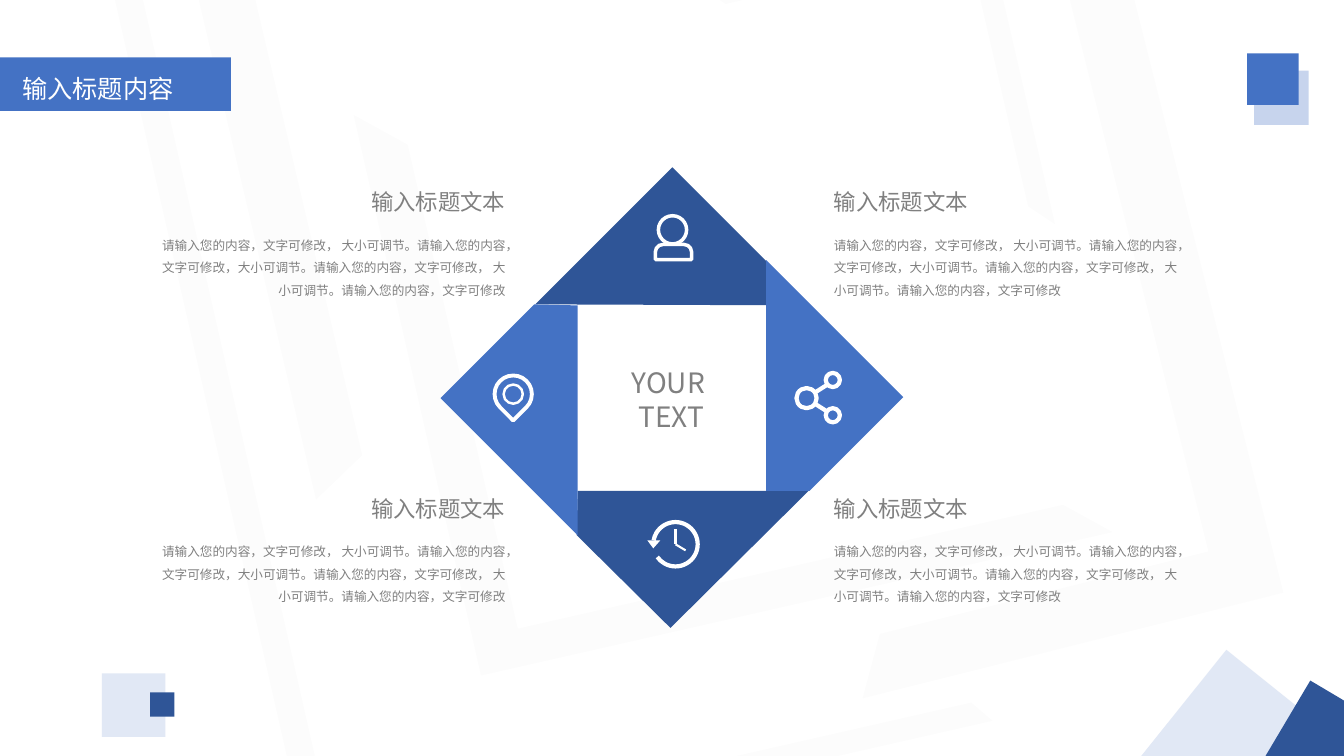
"""Build a slide with a four-part diamond, four text blocks and a centre label."""
from lxml import etree
from pptx import Presentation
from pptx.dml.color import RGBColor
from pptx.enum.shapes import MSO_CONNECTOR, MSO_SHAPE
from pptx.enum.text import MSO_ANCHOR, MSO_AUTO_SIZE, PP_ALIGN
from pptx.oxml.ns import qn
from pptx.util import Inches, Pt

RECT, OVAL, ARC = MSO_SHAPE.RECTANGLE, MSO_SHAPE.OVAL, MSO_SHAPE.ARC
HALF, PLATE = MSO_SHAPE.HALF_FRAME, MSO_SHAPE.PENTAGON
BODY, TEAR = MSO_SHAPE.ROUND_2_SAME_RECTANGLE, MSO_SHAPE.TEAR
LINE = MSO_CONNECTOR.STRAIGHT
LEFT, RIGHT, MID, JUST = PP_ALIGN.LEFT, PP_ALIGN.RIGHT, PP_ALIGN.CENTER, PP_ALIGN.JUSTIFY
TOP, FIT, FIXED = MSO_ANCHOR.TOP, MSO_AUTO_SIZE.SHAPE_TO_FIT_TEXT, MSO_AUTO_SIZE.NONE

FONT = "Noto Sans CJK SC"
BLUE, NAVY, PALE, GREY, WHITE = "4472C4", "2F5597", "C7D4ED", "808080", "FFFFFF"
HEAD = "输入标题文本"
NOTE = ("请输入您的内容，文字可修改， 大小可调节。请输入您的内容，文字可修改，大小可调节。"
        "请输入您的内容，文字可修改， 大小可调节。请输入您的内容，文字可修改")

deck = Presentation()
deck.slide_width, deck.slide_height = Inches(13.33), Inches(7.5)
slide = deck.slides.add_slide(deck.slide_layouts[5])
shapes = slide.shapes


def paint(form, color, alpha=100):
    form.solid()
    form.fore_color.rgb = RGBColor.from_string(color)
    if alpha < 100:
        tint = form.fore_color._xFill.find(qn("a:srgbClr"))
        etree.SubElement(tint, qn("a:alpha"), val=str(alpha * 1000))


def write(box, lines, size, color, align, inset=0, fit=FIT, **looks):
    frame = box.text_frame
    frame.text = "\n".join(lines)
    traits = {"word_wrap": True, "auto_size": fit, "vertical_anchor": TOP}
    for side in ("left", "top", "right", "bottom"):
        traits["margin_" + side] = Inches(inset / 2 if side in ("top", "bottom") else inset)
    for name, value in traits.items():
        setattr(frame, name, value)
    for para in frame.paragraphs:
        for name, value in {"alignment": align, **looks}.items():
            setattr(para, name, value)
        run = para.runs[0]
        run.font.size, run.font.name = Pt(size), FONT
        paint(run.font.fill, color)
        etree.SubElement(run._r.get_or_add_rPr(), qn("a:ea"), typeface=FONT)


blocks = [
    (HALF, (4.42, 0, 5.7, 6.42), 257.2, "A6A6A6", 3, (0.08, 0.065)),
    (HALF, (0.81, -0.06, 9.28, 6.9), 257.2, "A6A6A6", 3, (0.039, 0.032)),
    (HALF, (7.24, -0.34, 3.01, 2.83), 77, "A6A6A6", 3, (0.077, 0.052)),
    (HALF, (2.37, -1.66, 9.45, 5.61), 346.8, "A6A6A6", 3, (0.091, 0.097)),
    (HALF, (5.83, 0.5, 7.74, 4.3), 75.9, "A6A6A6", 3, (0.144, 0.134)),
    (PLATE, (0, 0.57, 2.29, 0.53), 0, BLUE, 100, (0,)),
    (RECT, (12.44, 0.7, 0.54, 0.54), 0, PALE, 100, ()),
    (RECT, (11.53, 6.75, 1.5, 1.5), 308.7, PALE, 53, ()),
    (RECT, (1.01, 6.68, 0.63, 0.63), 0, PALE, 53, ()),
    (RECT, (1.49, 6.87, 0.24, 0.24), 0, NAVY, 100, ()),
    (RECT, (12.37, 0.53, 0.51, 0.51), 0, BLUE, 100, ()),
    (RECT, (12.7, 6.92, 0.91, 0.91), 300.7, NAVY, 100, ()),
]
for kind, place, turn, color, alpha, bends in blocks:
    block = shapes.add_shape(kind, *map(Inches, place))
    block.shadow.inherit = False
    block.rotation = turn
    block.line.fill.background()
    paint(block.fill, color, alpha)
    for i, bend in enumerate(bends):
        block.adjustments[i] = bend
    if kind == HALF:
        last = block
    elif kind == PLATE:
        banner = block
last.element.spPr.find(qn("a:xfrm")).set("flipH", "1")

title = shapes.title
title.left, title.top, title.width, title.height = map(Inches, (0.12, 0.68, 2.17, 0.43))
write(title, ["输入标题内容"], 18, WHITE, JUST, 0.1, FIXED, line_spacing=1.0)
banner.element.addnext(title.element)

wedges = [
    (NAVY, [(8.02, 4.87), (6.65, 6.23), (5.72, 5.31), (5.73, 4.87)]),
    (NAVY, [(8.04, 3.03), (5.31, 3.02), (6.67, 1.66)]),
    (BLUE, [(5.3, 3.02), (5.73, 3.03), (5.73, 5.31), (4.37, 3.95)]),
    (BLUE, [(8.03, 4.87), (7.6, 4.87), (7.6, 2.58), (8.96, 3.94)]),
    (WHITE, [(6.42, 5.36), (6.55, 5.36), (6.48, 5.44)]),
]
for color, points in wedges:
    spots = [(Inches(x), Inches(y)) for x, y in points]
    pen = shapes.build_freeform(*spots[0])
    pen.add_line_segments(spots[1:])
    wedge = pen.convert_to_shape()
    wedge.shadow.inherit = False
    wedge.line.fill.background()
    paint(wedge.fill, color)

for top in (1.87, 4.91):
    for head, note, align in ((8.27, 8.27, LEFT), (3.32, 1.6, RIGHT)):
        box = shapes.add_textbox(*map(Inches, (head, top, 1.69, 0.27)))
        write(box, [HEAD], 16, GREY, align)
        box = shapes.add_textbox(*map(Inches, (note, top + 0.41, 3.41, 0.65)))
        write(box, [NOTE], 9, GREY, align, line_spacing=1.5, space_before=Pt(0.2))

icons = [
    (OVAL, 6.67, 2.28, 0.28, 0.28, 2.5, 0, ()),
    (BODY, 6.68, 2.5, 0.36, 0.15, 2.5, 0, (0.5, 0)),
    (ARC, 6.7, 5.4, 0.44, 0.44, 3, 0, (190 * 0.6, 145 * 0.6)),
    (TEAR, 5.09, 3.91, 0.37, 0.37, 2.75, 135, (1,)),
    (OVAL, 5.09, 3.91, 0.19, 0.19, 1.75, 0, ()),
    (OVAL, 8, 3.95, 0.2, 0.2, 3, 0, ()),
    (OVAL, 8.26, 3.77, 0.14, 0.14, 3, 0, ()),
    (OVAL, 8.26, 4.12, 0.14, 0.14, 3, 0, ()),
]
for kind, x, y, w, h, weight, turn, bends in icons:
    icon = shapes.add_shape(kind, *map(Inches, (x - w / 2, y - h / 2, w, h)))
    icon.shadow.inherit = False
    icon.fill.background()
    icon.rotation = turn
    icon.line.width = Pt(weight)
    paint(icon.line.fill, WHITE)
    for i, bend in enumerate(bends):
        icon.adjustments[i] = bend

strokes = [
    (6.7, 5.25, 6.7, 5.4, 1.5),
    (6.7, 5.4, 6.8, 5.46, 1.5),
    (8.09, 3.89, 8.2, 3.82, 3),
    (8.09, 4.01, 8.2, 4.08, 3),
]
for *ends, weight in strokes:
    stroke = shapes.add_connector(LINE, *map(Inches, ends))
    stroke.line.width = Pt(weight)
    paint(stroke.line.fill, WHITE)
    etree.SubElement(stroke.element.spPr, qn("a:effectLst"))

label = shapes.add_textbox(*map(Inches, (5.81, 3.63, 1.7, 0.67)))
write(label, ["YOUR ", "TEXT"], 20, GREY, MID)

deck.save("out.pptx")
